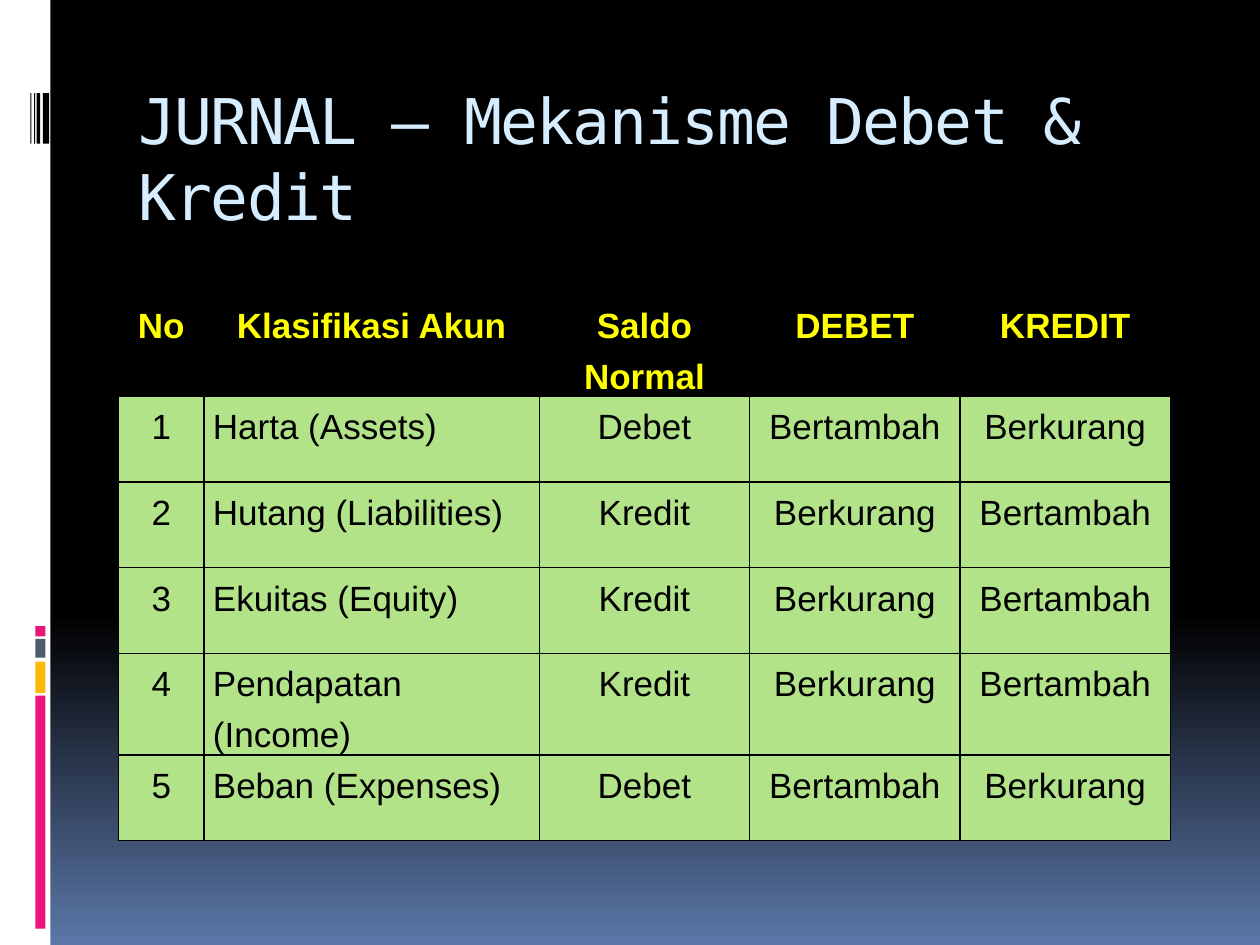
import copy

import pptx
import pptx.dml.color
import pptx.enum.shapes
import pptx.enum.text
import pptx.oxml
import pptx.oxml.ns
import pptx.util

Inches = pptx.util.Inches
Align = pptx.enum.text.PP_ALIGN
COLOURS = {
    "black": "000000", "white": "FFFFFF", "blue": "5B77A8", "slate": "4E5B6F",
    "pink": "EA157A", "amber": "FEB80A", "ice": "D6ECFF",
    "yellow": "FFFF00", "green": "B2E389",
}


def colour(name):
    return pptx.dml.color.RGBColor.from_string(COLOURS[name])


def add_run(para, text, size, font, ink, bold=False):
    span = para.add_run()
    span.text = text
    span.font.size = pptx.util.Pt(size)
    span.font.name = font
    span.font.bold = bold
    span.font.color.rgb = colour(ink)
    return span


deck = pptx.Presentation()
deck.slide_width, deck.slide_height = Inches(10), Inches(7.5)
page = deck.slides.add_slide(deck.slide_layouts[5])

# Background: black down to 65 %, then fading to blue
backdrop = page.background.fill
backdrop.gradient()
backdrop.gradient_angle = 270
first_stop = page.background.fill._fill._gradFill.gsLst[0]
first_stop.addnext(copy.deepcopy(first_stop))
for stop, (position, ink) in zip(
        backdrop.gradient_stops, [(0, "black"), (0.65, "black"), (1, "blue")]):
    stop.position = position
    stop.color.rgb = colour(ink)

# Side strip with its coloured blocks and thin bars: left, top, width, height
strip = [(0, 0, 0.4, 7.5, "white")]
strip += [(0.28, top, 0.08, height, ink) for top, height, ink in [
    (5.52, 1.85, "pink"), (5.25, 0.25, "amber"),
    (5.07, 0.15, "slate"), (4.97, 0.08, "pink")]]
strip += [(left, 0.74, width, 0.4, "black") for left, width in [
    (0.34, 0.05), (0.29, 0.03), (0.27, 0.01), (0.24, 0.01)]]
for left, top, width, height, ink in strip:
    block = page.shapes.add_shape(
        pptx.enum.shapes.MSO_SHAPE.RECTANGLE,
        Inches(left), Inches(top), Inches(width), Inches(height))
    block.shadow.inherit = False
    block.fill.solid()
    block.fill.fore_color.rgb = colour(ink)
    block.line.fill.background()

# Title
title = page.shapes.title
title.left, title.top = Inches(1), Inches(0.56)
title.width, title.height = Inches(8.5), Inches(1)
frame = title.text_frame
frame.word_wrap = True
frame.auto_size = pptx.enum.text.MSO_AUTO_SIZE.NONE
frame.vertical_anchor = pptx.enum.text.MSO_ANCHOR.TOP
frame.margin_top = Inches(0.09)
para = frame.paragraphs[0]
para.alignment = Align.LEFT
span = add_run(para, "JURNAL – Mekanisme Debet & Kredit", 36, "DejaVu Sans Mono", "ice")
span.font._element.set("spc", "-100")

# Table: debit accounts grow on the debit side, credit accounts on the credit side
accounts = [
    ("Harta (Assets)", "Debet"), ("Hutang (Liabilities)", "Kredit"),
    ("Ekuitas (Equity)", "Kredit"), ("Pendapatan (Income)", "Kredit"),
    ("Beban (Expenses)", "Debet"),
]
effects = {"Debet": ("Bertambah", "Berkurang"), "Kredit": ("Berkurang", "Bertambah")}
rows = [("No", "Klasifikasi Akun", "Saldo Normal", "DEBET", "KREDIT")]
rows += [(str(number), account, balance, *effects[balance])
         for number, (account, balance) in enumerate(accounts, 1)]
widths = [0.68, 2.66, 1.67, 1.67, 1.67]
row_height = 0.68

table = page.shapes.add_table(
    len(rows), len(widths), Inches(0.94), Inches(2.34),
    Inches(sum(widths)), Inches(row_height * len(rows))).table
table.first_row = table.horz_banding = False
for column, width in zip(table.columns, widths):
    column.width = Inches(width)

for r, row in enumerate(rows):
    table.rows[r].height = Inches(row_height)
    header = r == 0
    for c, text in enumerate(row):
        cell = table.cell(r, c)
        cell.margin_left = cell.margin_right = Inches(0.07)
        cell.margin_top = cell.margin_bottom = 0
        para = cell.text_frame.paragraphs[0]
        para.alignment = Align.JUSTIFY if c == 1 and not header else Align.CENTER
        para.line_spacing = 1.3
        add_run(para, text, 20, "Arial", "yellow" if header else "black", header)
        # Borders come before the fill in the cell properties
        properties = cell._tc.get_or_add_tcPr()
        for side in ("lnL", "lnR", "lnT", "lnB"):
            properties.append(pptx.oxml.parse_xml(
                f'<a:{side} {pptx.oxml.ns.nsdecls("a")} w="12700"><a:solidFill>'
                f'<a:srgbClr val="{COLOURS["black"]}"/></a:solidFill></a:{side}>'))
        if header:
            cell.fill.background()
        else:
            cell.fill.solid()
            cell.fill.fore_color.rgb = colour("green")

deck.save("out.pptx")
